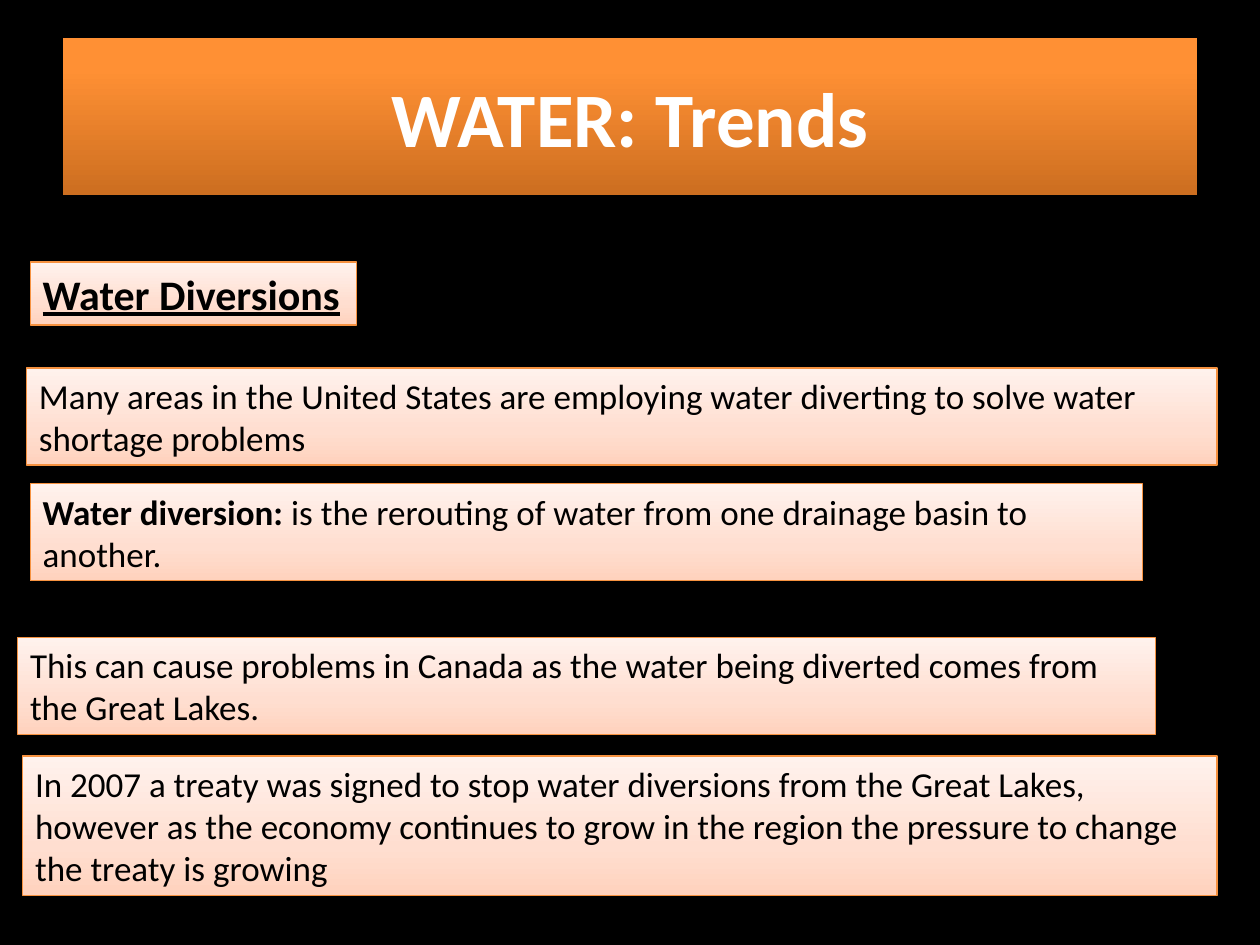
"""Build the slide on trends in water diversion."""
from copy import deepcopy

from pptx import Presentation
from pptx.dml.color import RGBColor
from pptx.enum.text import MSO_ANCHOR, MSO_AUTO_SIZE, PP_ALIGN
from pptx.oxml.ns import qn
from pptx.util import Inches, Pt

MIDDLE = MSO_ANCHOR.MIDDLE
GROW = MSO_AUTO_SIZE.SHAPE_TO_FIT_TEXT
CENTER = PP_ALIGN.CENTER
TITLE_ONLY = 5
FONT = "Calibri"
BLACK = RGBColor(0x00, 0x00, 0x00)
WHITE = RGBColor(0xFF, 0xFF, 0xFF)
ORANGE = RGBColor(0xF6, 0x92, 0x40)
TITLE_STOPS = [(0, "CC6E20"), (80, "FF9034"), (100, "FF9136")]
NOTE_STOPS = [(0, "FFD2BD"), (35, "FFDED0"), (100, "FFF2ED")]

TITLE = "WATER: Trends"
TITLE_PLACE = (0.5, 0.3, 9, 1.25)
HEADING = "Water Diversions"
HEADING_PLACE = (0.24, 2.08, 2.59, 0.5)
NOTES = [
    ((0.21, 2.92, 9.45, 0.77), [
        ("Many areas in the United States are employing water diverting "
         "to solve water shortage problems", False)]),
    ((0.24, 3.84, 8.83, 0.77), [
        ("Water diversion: ", True),
        ("is the rerouting of water from one drainage basin to another.", False)]),
    ((0.14, 5.06, 9.03, 0.77), [
        ("This can cause problems in Canada as the water being diverted "
         "comes from the Great Lakes.", False)]),
    ((0.18, 6, 9.48, 1.11), [
        ("In 2007 a treaty was signed to stop water diversions from the Great Lakes, "
         "however as the economy continues to grow in the region the pressure "
         "to change the treaty is growing", False)]),
]


def fill_gradient(shape, stops):
    """Fill a shape with a gradient that runs from bottom to top."""
    shape.fill.gradient()
    shape.fill.gradient_angle = 90
    stop_list = next(shape.element.iter(qn("a:gsLst")))
    stop_list.append(deepcopy(stop_list[-1]))
    for stop, (percent, color) in zip(shape.fill.gradient_stops, stops):
        stop.position = percent / 100
        stop.color.rgb = RGBColor.from_string(color)


def add_span(para, text, size, color, bold, underline=False):
    """Add one formatted run to a paragraph."""
    span = para.add_run()
    span.text = text
    font = span.font
    font.name, font.size = FONT, Pt(size)
    font.bold, font.underline = bold, underline
    font.color.rgb = color


def add_box(page, place, wrap=True):
    """Add a peach text box and return its first paragraph."""
    box = page.shapes.add_textbox(*map(Inches, place))
    fill_gradient(box, NOTE_STOPS)
    box.line.color.rgb = ORANGE
    box.line.width = Pt(0.75)
    box.shadow.inherit = False
    box.text_frame.word_wrap = wrap
    box.text_frame.auto_size = GROW
    return box.text_frame.paragraphs[0]


def add_title(page):
    """Place and format the title."""
    title = page.shapes.title
    title.left, title.top, title.width, title.height = map(Inches, TITLE_PLACE)
    fill_gradient(title, TITLE_STOPS)
    title.shadow.inherit = False
    title.text_frame.vertical_anchor = MIDDLE
    para = title.text_frame.paragraphs[0]
    para.alignment = CENTER
    add_span(para, TITLE, 44, WHITE, True)


def main():
    deck = Presentation()
    deck.slide_width, deck.slide_height = Inches(10), Inches(7.5)
    page = deck.slides.add_slide(deck.slide_layouts[TITLE_ONLY])
    page.background.fill.solid()
    page.background.fill.fore_color.rgb = BLACK
    add_title(page)
    for place, spans in NOTES:
        para = add_box(page, place)
        for text, bold in spans:
            add_span(para, text, 20, BLACK, bold)
    heading = add_box(page, HEADING_PLACE, wrap=False)
    add_span(heading, HEADING, 24, BLACK, True, underline=True)
    deck.save("out.pptx")


if __name__ == "__main__":
    main()
